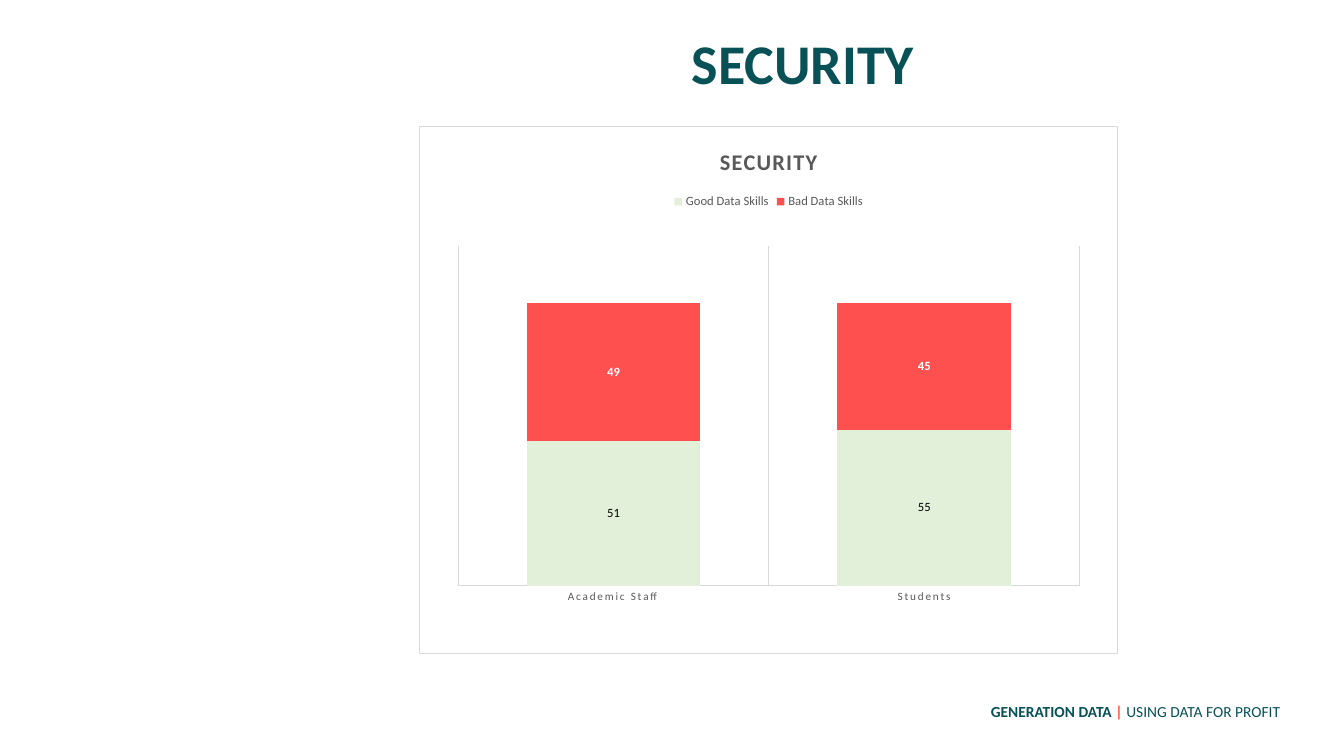
from dataclasses import dataclass

from lxml import etree
from pptx import Presentation
from pptx.chart.data import CategoryChartData
from pptx.dml.color import RGBColor
from pptx.enum.chart import XL_CHART_TYPE, XL_LABEL_POSITION, XL_LEGEND_POSITION, XL_TICK_MARK
from pptx.enum.text import MSO_ANCHOR, MSO_AUTO_SIZE, PP_ALIGN
from pptx.oxml import parse_xml
from pptx.oxml.ns import nsdecls, qn
from pptx.util import Pt

STACKED = XL_CHART_TYPE.COLUMN_STACKED
LABEL_CENTER = XL_LABEL_POSITION.CENTER
LEGEND_TOP = XL_LEGEND_POSITION.TOP
NO_TICK = XL_TICK_MARK.NONE
TOP = MSO_ANCHOR.TOP
NO_AUTOFIT = MSO_AUTO_SIZE.NONE
CENTER, RIGHT = PP_ALIGN.CENTER, PP_ALIGN.RIGHT


@dataclass(frozen=True)
class Theme:
    font: str = "Calibri"
    teal: str = "085156"
    orange: str = "F15A2A"
    gray: str = "595959"
    rule: str = "D9D9D9"
    white: str = "FFFFFF"
    black: str = "000000"
    good: str = "E2F0D9"
    bad: str = "FF5050"
    title_size: int = 40
    footer_size: int = 11
    chart_size: int = 10
    chart_title_size: int = 16
    category_size: int = 8
    label_size: int = 9


THEME = Theme()
CATEGORIES = ("Academic Staff", "Students")
# Name, values, fill, label colour, label bold
SERIES = (
    ("Good Data Skills", (51, 55), THEME.good, THEME.black, False),
    ("Bad Data Skills", (49, 45), THEME.bad, THEME.white, True),
)
PLOT_AREA = {"x": 0.055, "y": 0.227, "w": 0.891, "h": 0.644}


def style_font(font, size, color, bold=False):
    font.name = THEME.font
    font.size = Pt(size)
    font.bold = bold
    font.color.rgb = RGBColor.from_string(color)


def style_line(line):
    line.color.rgb = RGBColor.from_string(THEME.rule)
    line.width = Pt(0.75)


def write_line(shape, spans, size, align):
    """Fill a shape with one paragraph of (text, colour, bold) spans."""
    frame = shape.text_frame
    frame.word_wrap = True
    frame.auto_size = NO_AUTOFIT
    frame.vertical_anchor = TOP
    para = frame.paragraphs[0]
    para.alignment = align
    for text, color, bold in spans:
        span = para.add_run()
        span.text = text
        style_font(span.font, size, color, bold)
    return para


def add_title(page, text):
    title = page.shapes.title
    title.left, title.top, title.width, title.height = Pt(211), Pt(22.3), Pt(725), Pt(67.7)
    title.fill.solid()
    title.fill.fore_color.rgb = RGBColor.from_string(THEME.white)
    para = write_line(title, [(text, THEME.teal, True)], THEME.title_size, CENTER)
    para.line_spacing = 0.9


def add_footer(page):
    box = page.shapes.add_textbox(Pt(51.8), Pt(498.2), Pt(869.8), Pt(32.4))
    spans = [
        ("GENERATION DATA ", THEME.teal, True),
        ("| ", THEME.orange, True),
        ("USING DATA FOR PROFIT", THEME.teal, False),
    ]
    write_line(box, spans, THEME.footer_size, RIGHT)


def frame_chart(chart):
    """Give the chart area a white fill and a thin border."""
    area = parse_xml(
        f'<c:spPr {nsdecls("c", "a")}>'
        f'<a:solidFill><a:srgbClr val="{THEME.white}"/></a:solidFill>'
        f'<a:ln w="{Pt(0.75)}"><a:solidFill><a:srgbClr val="{THEME.rule}"/></a:solidFill></a:ln>'
        "</c:spPr>"
    )
    chart._chartSpace.find(qn("c:chart")).addnext(area)


def place_plot(chart):
    """Fix the inner plot area as fractions of the chart."""
    plot_area = chart._chartSpace.find(qn("c:chart")).find(qn("c:plotArea"))
    for old in plot_area.findall(qn("c:layout")):
        plot_area.remove(old)
    layout = etree.Element(qn("c:layout"))
    manual = etree.SubElement(layout, qn("c:manualLayout"))
    settings = {"layoutTarget": "inner", "xMode": "edge", "yMode": "edge", **PLOT_AREA}
    for tag, value in settings.items():
        etree.SubElement(manual, qn(f"c:{tag}")).set("val", str(value))
    plot_area.insert(0, layout)


def style_axes(chart):
    category = chart.category_axis
    category.major_tick_mark = category.minor_tick_mark = NO_TICK
    category.has_major_gridlines = True
    style_line(category.major_gridlines.format.line)
    style_line(category.format.line)
    font = category.tick_labels.font
    style_font(font, THEME.category_size, THEME.gray)
    font._element.set("spc", "120")
    value = chart.value_axis
    value.minimum_scale, value.maximum_scale = 0, 120
    value.has_major_gridlines = False
    value.visible = False


def style_series(plot):
    plot.gap_width, plot.overlap = 79, 100
    plot.vary_by_categories = False
    for series, (_, _, fill, label_color, bold) in zip(plot.series, SERIES):
        series.format.fill.solid()
        series.format.fill.fore_color.rgb = RGBColor.from_string(fill)
        labels = series.data_labels
        labels.show_value = True
        labels.position = LABEL_CENTER
        style_font(labels.font, THEME.label_size, label_color, bold)


def add_skills_chart(page, title):
    data = CategoryChartData()
    data.categories = CATEGORIES
    for name, values, *_ in SERIES:
        data.add_series(name, values)
    chart = page.shapes.add_chart(STACKED, Pt(299.5), Pt(90), Pt(499), Pt(377.3), data).chart
    style_font(chart.font, THEME.chart_size, THEME.black)
    frame_chart(chart)

    # Heading and legend
    span = chart.chart_title.text_frame.paragraphs[0].add_run()
    span.text = title
    style_font(span.font, THEME.chart_title_size, THEME.gray, True)
    span.font._element.set("spc", "100")
    chart.chart_title.include_in_layout = False
    chart.has_legend = True
    chart.legend.position = LEGEND_TOP
    chart.legend.include_in_layout = False
    style_font(chart.legend.font, THEME.label_size, THEME.gray)

    style_axes(chart)
    style_series(chart.plots[0])
    place_plot(chart)


def main():
    deck = Presentation()
    deck.slide_width, deck.slide_height = Pt(960), Pt(540)
    page = deck.slides.add_slide(deck.slide_layouts[5])
    add_footer(page)
    add_title(page, "SECURITY")
    add_skills_chart(page, "SECURITY")
    deck.save("out.pptx")


if __name__ == "__main__":
    main()
